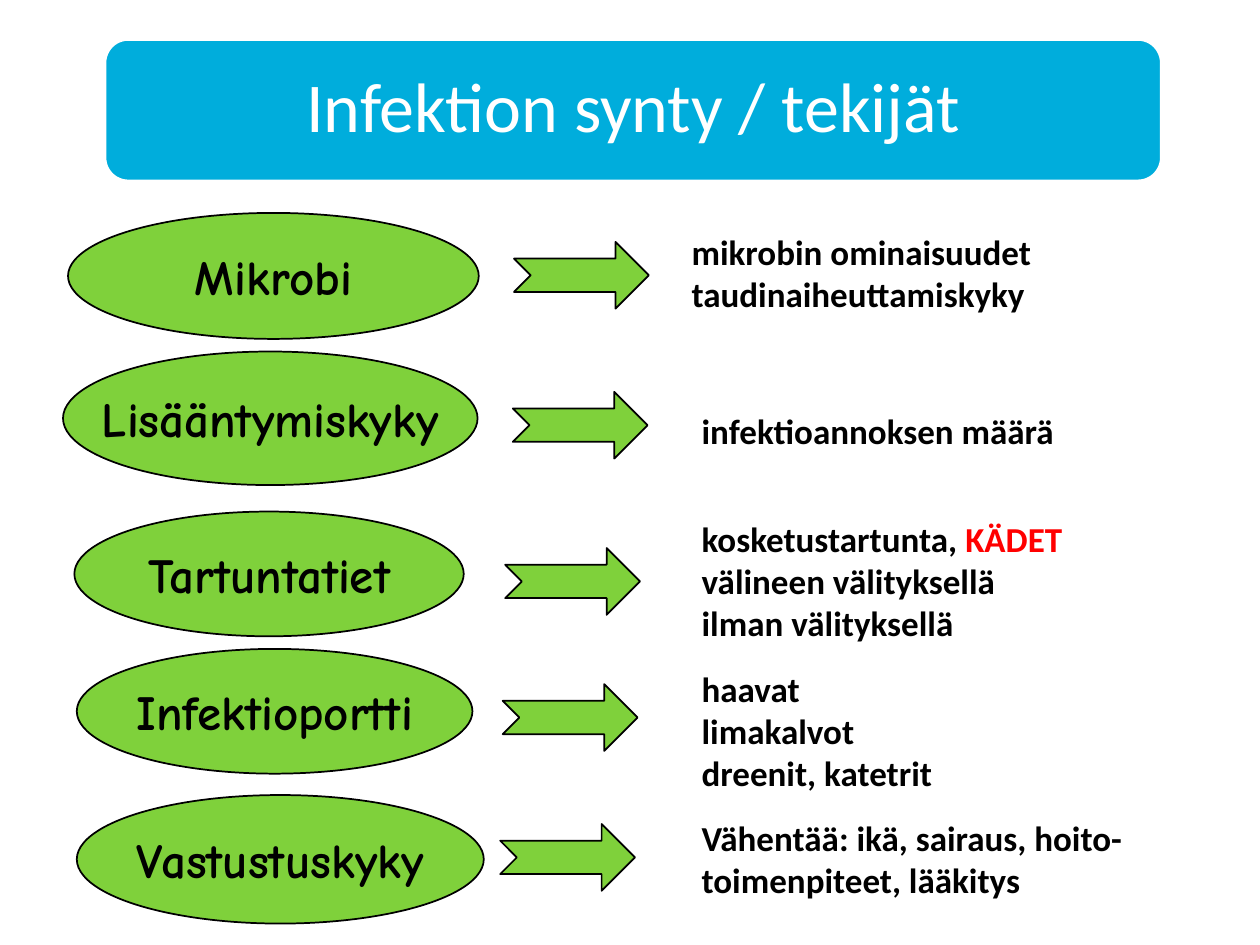
"""Builds the slide on how an infection arises and the factors behind it."""
from pptx import Presentation
from pptx import util as u
from pptx.dml.color import RGBColor
from pptx.enum import shapes, text

BLUE = RGBColor(0x00, 0xAD, 0xDC)
GREEN = RGBColor(0x7F, 0xD1, 0x3B)
RED = RGBColor(0xFF, 0x00, 0x00)
BLACK = RGBColor(0x00, 0x00, 0x00)
WHITE = RGBColor(0xFF, 0xFF, 0xFF)

presentation = Presentation()
presentation.slide_width = u.Inches(10)
presentation.slide_height = u.Inches(7.5)
slide = presentation.slides.add_slide(presentation.slide_layouts[6])
column = presentation.slide_width / 100
row = presentation.slide_height / 75


def add_figure(kind, left, top, width, height, fill, line, line_width):
    shape = slide.shapes.add_shape(
        kind, int(left * column), int(top * row), int(width * column), int(height * row))
    shape.shadow.inherit = False
    shape.fill.solid()
    shape.fill.fore_color.rgb = fill
    shape.line.color.rgb = line
    shape.line.width = u.Pt(line_width)
    return shape


def add_run(paragraph, words, font, size, color, bold=True):
    run = paragraph.add_run()
    run.text = words
    run.font.name = font
    run.font.size = u.Pt(size)
    run.font.bold = bold
    run.font.color.rgb = color


banner = add_figure(shapes.MSO_SHAPE.ROUNDED_RECTANGLE, 8.3, 3.1, 83.9, 11.3, BLUE, WHITE, 2)
banner.text_frame.vertical_anchor = text.MSO_ANCHOR.MIDDLE
title = banner.text_frame.paragraphs[0]
title.alignment = text.PP_ALIGN.CENTER
title.line_spacing = 0.9
add_run(title, "Infektion synty / tekijät", "Calibri", 40, WHITE, bold=False)

factors = [
    ("Mikrobi", (5.4, 16.9, 32.6, 10), (40.8, 19.2), (53.9, 17.8, 36, 11.1), True,
     [[("mikrobin ominaisuudet", BLACK)], [("taudinaiheuttamiskyky", BLACK)]]),
    ("Lisääntymiskyky", (5, 27.9, 32.9, 10.6), (40.7, 31.1), (54.7, 32, 30.2, 4.4), False,
     [[("infektioannoksen määrä", BLACK)]]),
    ("Tartuntatiet", (5.9, 40.6, 30.9, 9.9), (40.1, 43.5), (54.7, 40.6, 42.1, 11), True,
     [[("kosketustartunta, ", BLACK), ("KÄDET", RED)],
      [("välineen välityksellä", BLACK)], [("ilman välityksellä", BLACK)]]),
    ("Infektioportti", (6.1, 51.5, 31.4, 9.9), (39.9, 54.3), (54.7, 52.5, 32.4, 11), True,
     [[("haavat", BLACK)], [("limakalvot", BLACK)], [("dreenit, katetrit", BLACK)]]),
    ("Vastustuskyky", (6.1, 63.1, 32.3, 10.2), (39.7, 65.4), (54.7, 64.3, 35.7, 7.7), False,
     [[("Vähentää: ikä, sairaus, hoito-", BLACK)], [("toimenpiteet, lääkitys", BLACK)]]),
]

for name, ellipse_place, arrow_corner, box_place, wraps, lines in factors:
    ellipse = add_figure(shapes.MSO_SHAPE.OVAL, *ellipse_place, GREEN, BLACK, 1)
    ellipse.text_frame.word_wrap = False
    ellipse.text_frame.vertical_anchor = text.MSO_ANCHOR.MIDDLE
    label = ellipse.text_frame.paragraphs[0]
    label.alignment = text.PP_ALIGN.CENTER
    add_run(label, name, "Comic Neue", 28, BLACK)

    add_figure(shapes.MSO_SHAPE.NOTCHED_RIGHT_ARROW, *arrow_corner, 10.7, 5.3, GREEN, BLACK, 1)

    left, top, width, height = box_place
    box = slide.shapes.add_textbox(
        int(left * column), int(top * row), int(width * column), int(height * row))
    frame = box.text_frame
    frame.word_wrap = wraps
    frame.auto_size = text.MSO_AUTO_SIZE.SHAPE_TO_FIT_TEXT
    for index, line in enumerate(lines):
        paragraph = frame.add_paragraph() if index else frame.paragraphs[0]
        for words, color in line:
            add_run(paragraph, words, "Calibri", 20, color)

presentation.save("out.pptx")
